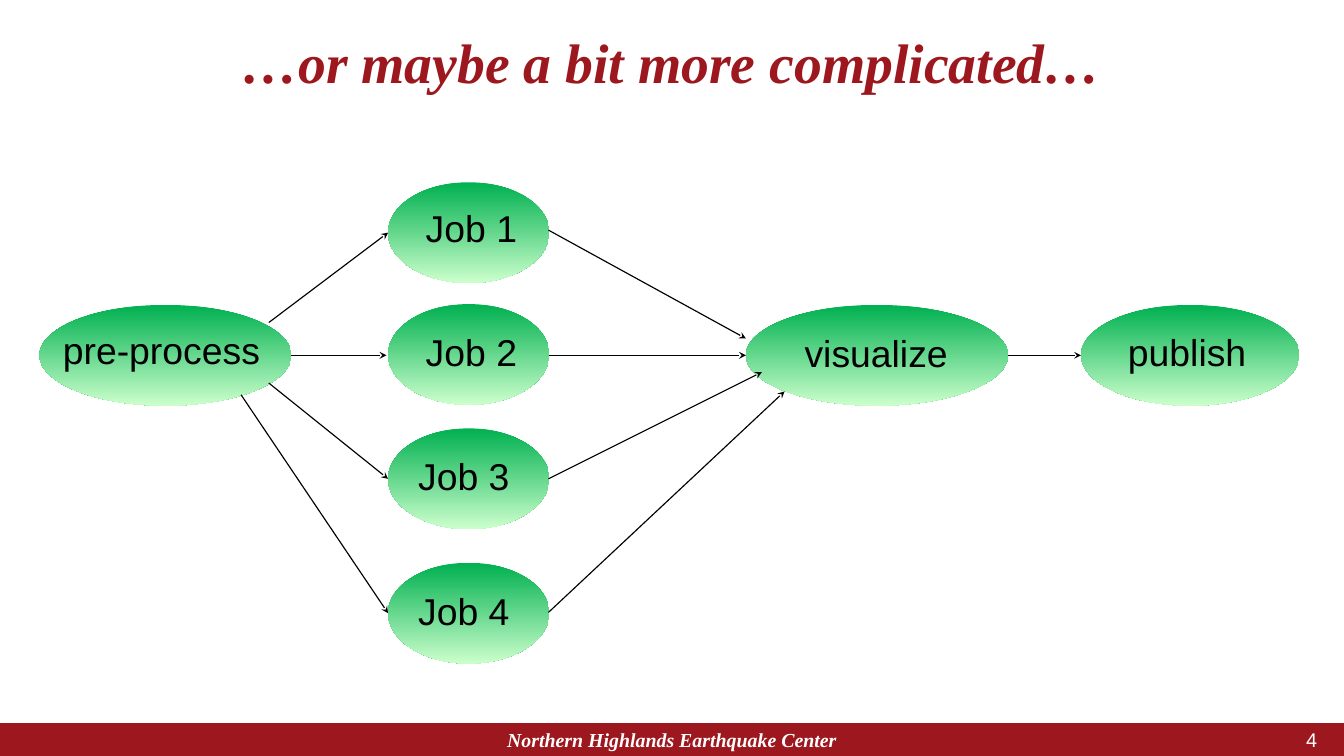
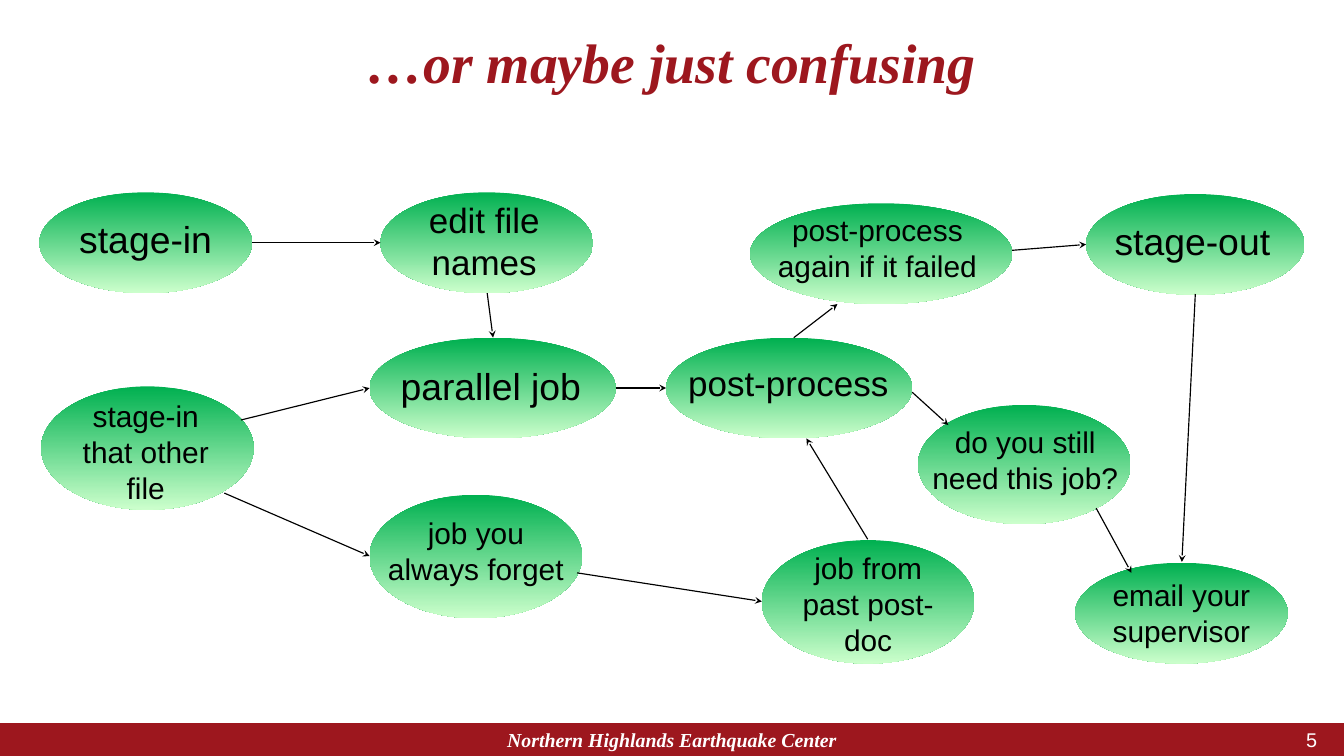
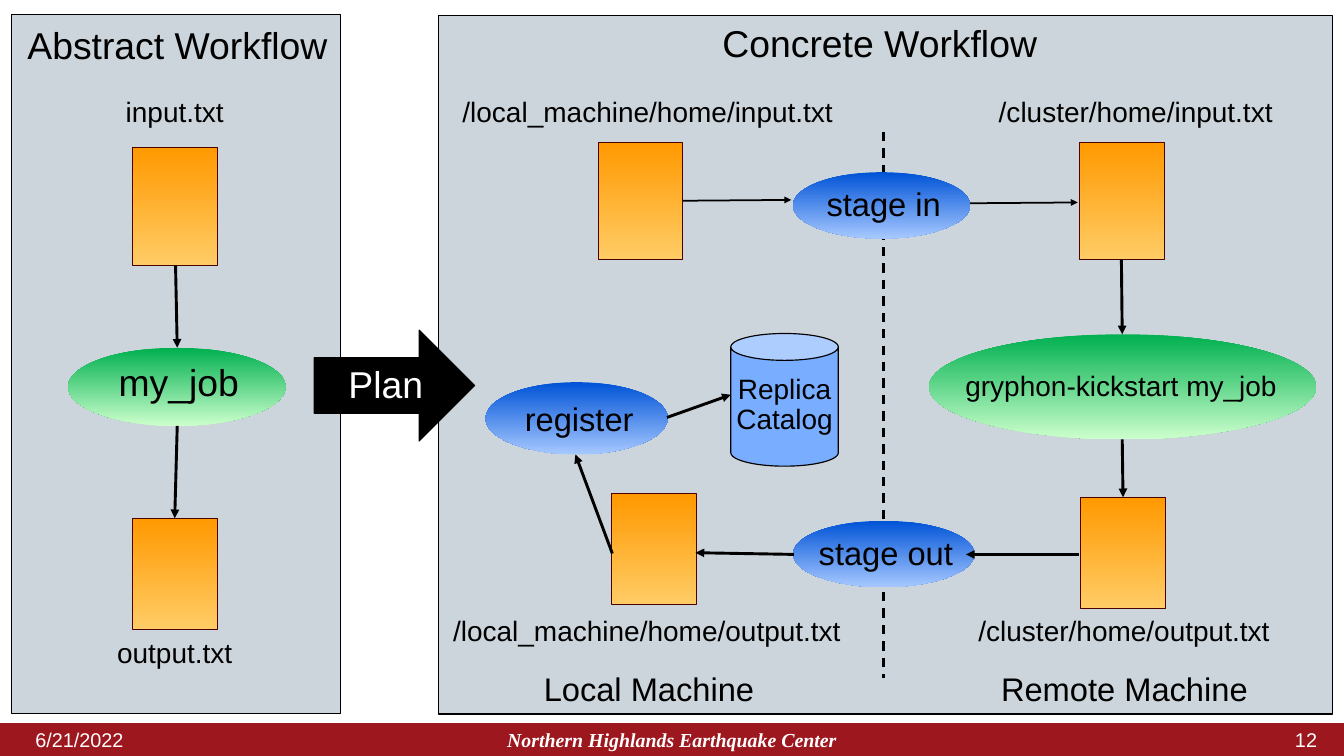
from lxml.etree import SubElement
from pptx import Presentation
from pptx.dml.color import RGBColor
from pptx.enum.dml import MSO_LINE_DASH_STYLE as DASH
from pptx.enum.shapes import MSO_CONNECTOR as CONN, MSO_SHAPE as SHAPE
from pptx.enum.text import MSO_ANCHOR as ANCHOR, PP_ALIGN as ALIGN
from pptx.oxml.ns import qn
from pptx.util import Inches, Pt

COLORS = {
    "brand": "9D171E", "white": "FFFFFF", "black": "000000", "panel": "CCD5DB",
    "file_line": "4C0000", "catalog": "79ADFF",
}
GRADIENTS = {
    "job": ("00B050", "CCFFCC"),
    "transfer": ("0053D7", "A6C8FF"),
    "file": ("FF9900", "FFCC66"),
}
SANS, SERIF = "Arial", "Times New Roman"
LEFT, CENTER, RIGHT = ALIGN.LEFT, ALIGN.CENTER, ALIGN.RIGHT
FOOTER = "Northern Highlands Earthquake Center"


def rgb(name):
    return RGBColor.from_string(COLORS[name])


def add_text(s, x, y, w, text, size, align=CENTER, color="black", lines=1,
             spacing=None, h=None, font=SANS, bold_italic=False, framed=False):
    if h is None:
        h = round(lines * size * 1.2 * (spacing or 1) / 72 + 0.1, 2)
    tf = s.shapes.add_textbox(Inches(x), Inches(y), Inches(w), Inches(h)).text_frame
    tf.word_wrap = True
    if framed:
        tf.margin_left = tf.margin_right = Inches(0.12)
        tf.margin_top = tf.margin_bottom = Inches(0.06)
    tf.text = text
    p = tf.paragraphs[0]
    p.alignment = align
    if spacing:
        p.line_spacing = spacing
    f = p.runs[0].font
    f.name, f.size, f.color.rgb = font, Pt(size), rgb(color)
    if bold_italic:
        f.bold = f.italic = True
    return tf


def add_box(s, kind, x, y, w, h, fill, line=None, weight=1):
    sp = s.shapes.add_shape(kind, Inches(x), Inches(y), Inches(w), Inches(h))
    sp.shadow.inherit = False
    if fill in GRADIENTS:
        sp.fill.gradient()
        sp.fill.gradient_angle = 270
        for stop, color in zip(sp.fill.gradient_stops, GRADIENTS[fill]):
            stop.color.rgb = RGBColor.from_string(color)
    else:
        sp.fill.solid()
        sp.fill.fore_color.rgb = rgb(fill)
    if line:
        sp.line.color.rgb = rgb(line)
        sp.line.width = Pt(weight)
    else:
        sp.line.fill.background()


def add_line(s, x1, y1, x2, y2, weight, head=None, dash=None):
    c = s.shapes.add_connector(CONN.STRAIGHT, Inches(x1), Inches(y1), Inches(x2), Inches(y2))
    c.line.color.rgb = rgb("black")
    c.line.width = Pt(weight)
    if dash:
        c.line.dash_style = dash
    if head:
        SubElement(c.line._get_or_add_ln(), qn("a:tailEnd"), type=head)
    SubElement(c._element.spPr, qn("a:effectLst"))


def add_node(s, box, text, dx, dy, tw, size=32, lines=1, align=CENTER, fill="job"):
    x, y, w, h = box
    add_box(s, SHAPE.OVAL, x, y, w, h, fill)
    add_text(s, x + dx, y + dy, tw, text, size, align, lines=lines)


def add_file(s, x, y, h):
    add_box(s, SHAPE.RECTANGLE, x, y, 1.01, h, "file", "file_line", 0.75)


def add_arrows(s, x, y, arrows, weight, head):
    for x1, y1, x2, y2 in arrows:
        add_line(s, x + x1, y + y1, x + x2, y + y2, weight, head)


def new_slide(prs, number, title=None, date=None):
    s = prs.slides.add_slide(prs.slide_layouts[6])
    add_box(s, SHAPE.RECTANGLE, 0, 8.61, 16, 0.39, "brand")
    if title:
        add_text(s, 0.4, 0.36, 15.2, title, 47.7, color="brand", spacing=0.9,
                 h=0.84, font=SERIF, bold_italic=True, framed=True)
    footers = [
        (5.3, 8.57, 5.4, 0.48, FOOTER, CENTER, SERIF, True),
        (14.3, 8.69, 1.5, 0.24, number, RIGHT, SANS, False),
    ]
    if date:
        footers.append((0.3, 8.69, 1.83, 0.24, date, LEFT, SANS, False))
    for x, y, w, h, text, align, font, strong in footers:
        tf = add_text(s, x, y, w, text, 17, align, "white", h=h, font=font,
                      bold_italic=strong, framed=True)
        tf.vertical_anchor = ANCHOR.MIDDLE
    return s


def workflow_slide(prs, number, title, nodes, arrows):
    s = new_slide(prs, number, title)
    for node in nodes:
        add_node(s, *node)
    add_arrows(s, 0, 0, arrows, 1, "stealth")


def parallel_slide(prs):
    steps = [
        ((0.47, 3.63, 3, 1.2), "pre-process", 0.18, 0.21, 2.67),
        ((8.88, 3.63, 3.12, 1.2), "visualize", 0.6, 0.25, 2.93),
        ((12.87, 3.63, 2.6, 1.2), "publish", 0.46, 0.24, 2.33),
    ]
    jobs = [(2.17, 0.35, 0.22), (3.62, 0.35, 0.25), (5.1, 0.26, 0.25), (6.7, 0.26, 0.25)]
    for i, (y, dx, dy) in enumerate(jobs, 1):
        steps.append(((4.62, y, 1.92, 1.2), f"Job {i}", dx, dy, 1.87))
    nodes = [(*step, 32, 1, LEFT) for step in steps]
    arrows = [
        (3.2, 3.84, 4.62, 2.77), (3.47, 4.23, 4.6, 4.23),
        (3.2, 4.56, 4.62, 5.7), (2.87, 4.7, 4.62, 7.3),
        (6.53, 2.74, 8.88, 4.03), (6.53, 4.23, 8.88, 4.23),
        (6.53, 5.7, 9.07, 4.43), (6.53, 7.29, 9.34, 4.66),
        (12, 4.23, 12.87, 4.23),
    ]
    workflow_slide(prs, "4", "…or maybe a bit more complicated…", nodes, arrows)


def confusing_slide(prs):
    nodes = [
        ((0.47, 2.29, 2.53, 1.2), "stage-in", 0.2, 0.23, 2.13),
        ((4.53, 2.29, 2.53, 1.2), "edit file names", 0.17, 0.02, 2.13, 30, 2),
        ((8.93, 2.42, 3.12, 1.2), "post-process again if it failed", 0.05, 0.05, 2.93, 25.6, 2),
        ((12.93, 2.31, 2.6, 1.2), "stage-out", 0.24, 0.24, 2.33, 32, 1, LEFT),
        ((4.4, 4.02, 2.93, 1.2), "parallel job", 0.27, 0.25, 2.67, 32, 1, LEFT),
        ((7.93, 4.02, 2.93, 1.2), "post-process", -0.01, 0.23, 2.93, 30),
        ((0.49, 4.6, 2.53, 1.47), "stage-in that other file", 0.18, 0.09, 2.13, 25.6, 3),
        ((4.4, 5.89, 2.53, 1.47), "job you always forget", 0.1, 0.19, 2.33, 25.6, 2),
        ((9.07, 6.43, 2.53, 1.47), "job from past post-doc", 0.2, 0.07, 2.13, 25.6, 3),
        ((10.93, 4.82, 2.53, 1.42), "do you still need this job?", -0.06, 0.18, 2.67, 25.6, 2),
        ((12.8, 6.7, 2.53, 1.2), "email your supervisor", 0.2, 0.12, 2.13, 25.6, 2),
    ]
    arrows = [
        (3, 2.89, 4.53, 2.89), (2.87, 5, 4.4, 4.62), (2.67, 5.87, 4.4, 6.62),
        (5.8, 3.49, 5.87, 4.02), (10.33, 6.42, 9.6, 5.22), (7.33, 4.62, 7.93, 4.62),
        (6.87, 6.82, 9.07, 7.16), (9.45, 4.02, 9.97, 3.62), (12.05, 2.98, 12.93, 2.91),
        (14.23, 3.5, 14.07, 6.69), (13.05, 6.05, 13.47, 6.82), (10.86, 4.67, 11.29, 5.06),
    ]
    workflow_slide(prs, "5", "…or maybe just confusing", nodes, arrows)


def abstract_panel(s, x, y, w, h):
    add_box(s, SHAPE.RECTANGLE, x, y, w, h, "panel", "black")
    add_text(s, x, y + 0.1, w + 0.04, "Abstract Workflow", 32, spacing=0.9)
    add_text(s, x + 0.74, y + 0.91, 2.4, "input.txt", 24)
    add_file(s, x + 1.44, y + 1.59, 1.4)
    add_node(s, (x + 0.67, y + 3.97, 2.59, 0.93), "my_job", -0.03, 0.09, 2.7)
    add_file(s, x + 1.44, y + 6, 1.32)
    add_text(s, x + 0.34, y + 7.35, 3.2, "output.txt", 24)
    arrows = [(1.95, 2.99, 1.97, 3.97), (1.97, 4.9, 1.94, 6)]
    add_arrows(s, x, y, arrows, 2.5, "triangle")


def concrete_panel(s, x, y, w, h):
    add_box(s, SHAPE.RECTANGLE, x, y, w, h, "panel", "black")
    add_line(s, x + 5.3, y + 1.39, x + 5.3, y + 7.89, 2, dash=DASH.DASH)
    labels = [
        (2.95, 0.07, 4.61, "Concrete Workflow", 32, 0.9),
        (0.03, 0.9, 4.92, "/local_machine/home/input.txt", 24, None),
        (5.84, 0.9, 4.92, "/cluster/home/input.txt", 24, None),
        (0.02, 7.07, 4.92, "/local_machine/home/output.txt", 24, None),
        (5.7, 7.07, 4.92, "/cluster/home/output.txt", 24, None),
        (0.2, 7.79, 4.61, "Local Machine", 28, 0.9),
        (5.86, 7.78, 4.61, "Remote Machine", 28, 0.9),
    ]
    for dx, dy, tw, text, size, spacing in labels:
        add_text(s, x + dx, y + dy, tw, text, size, spacing=spacing)
    for dx, dy, fh in [(1.9, 1.51, 1.4), (7.63, 1.51, 1.4), (2.06, 5.7, 1.32), (7.64, 5.74, 1.32)]:
        add_file(s, x + dx, y + dy, fh)
    transfers = [
        (4.22, 1.87, 2.11, 0.79, "stage in", 0.09, 2.2),
        (4.22, 6.02, 2.16, 0.79, "stage out", 0.09, 2.25),
        (0.56, 4.37, 2.17, 0.86, "register", 0.15, 2.27),
    ]
    for dx, dy, nw, nh, text, ty, tw in transfers:
        add_node(s, (x + dx, y + dy, nw, nh), text, -0.02, ty, tw, 28, fill="transfer")
    add_node(s, (x + 5.84, y + 3.8, 4.61, 1.25), "gryphon-kickstart my_job", 0.29, 0.36, 3.99, 24)
    add_box(s, SHAPE.CAN, x + 3.48, y + 3.79, 1.28, 1.58, "catalog", "black")
    add_text(s, x + 3.3, y + 4.24, 1.64, "Replica Catalog", 24, lines=2, spacing=0.9)
    staging_arrows = [(2.91, 2.21, 4.2, 2.2), (6.33, 2.24, 7.61, 2.23)]
    job_arrows = [
        (8.13, 2.91, 8.14, 3.8), (8.14, 5.05, 8.15, 5.74), (7.62, 6.42, 6.28, 6.42),
        (4.23, 6.42, 3.06, 6.4), (2.07, 6.41, 1.63, 5.23), (2.72, 4.79, 3.48, 4.52),
    ]
    add_arrows(s, x, y, staging_arrows, 1.5, "triangle")
    add_arrows(s, x, y, job_arrows, 2.5, "triangle")


def plan_arrow(s, x, y, w, h):
    add_box(s, SHAPE.RIGHT_ARROW, x, y, w, h, "black", "black")
    add_text(s, x + 0.31, y + 0.38, 1.54, "Plan", 32, LEFT, "white", spacing=0.9)


def planning_slide(prs):
    s = new_slide(prs, "12", date="6/21/2022")
    concrete_panel(s, 5.22, 0.18, 10.64, 8.32)
    abstract_panel(s, 0.14, 0.17, 3.91, 8.32)
    plan_arrow(s, 3.74, 3.93, 1.91, 1.32)


def main():
    prs = Presentation()
    prs.slide_width, prs.slide_height = Inches(16), Inches(9)
    parallel_slide(prs)
    confusing_slide(prs)
    planning_slide(prs)
    prs.save("out.pptx")


if __name__ == "__main__":
    main()
